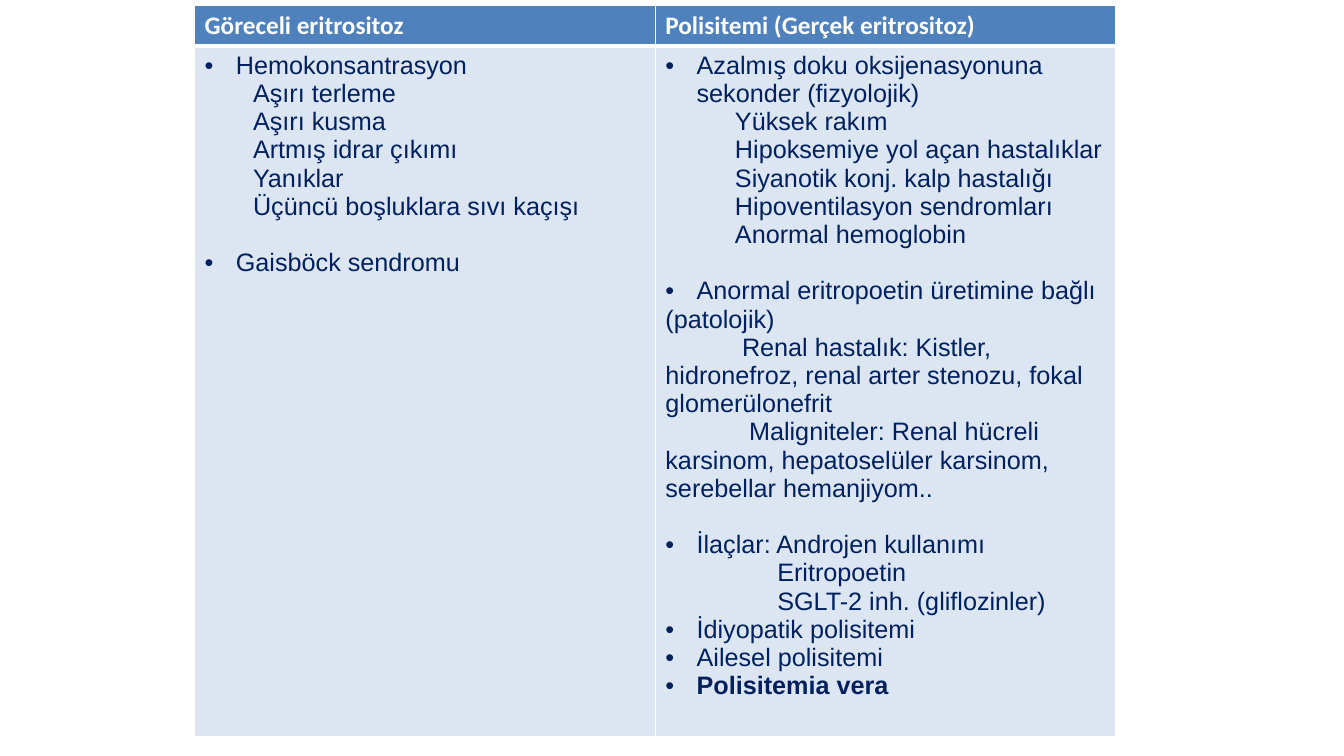
from dataclasses import dataclass

from lxml import etree
from pptx import Presentation
from pptx.dml.color import RGBColor
from pptx.oxml.ns import qn
from pptx.util import Inches, Pt

BLANK_LAYOUT = 6
SLIDE_WIDTH, SLIDE_HEIGHT = 13.33, 7.5
TABLE_LEFT, TABLE_TOP = 1.93, 0.05
COLUMN_WIDTH = 4.57
HEADER_HEIGHT, BODY_HEIGHT = 0.41, 6.85
BULLET_INDENT = 0.31
SECTION_GAP = 20.1


@dataclass(frozen=True)
class Theme:
    header_fill: str = "4F81BD"
    body_fill: str = "DCE6F2"
    header_text: str = "FFFFFF"
    body_text: str = "002060"
    border: str = "FFFFFF"
    header_font: str = "Calibri"
    body_font: str = "Arial"
    size: int = 18
    thin: int = 1
    thick: int = 3


THEME = Theme()


@dataclass(frozen=True)
class Line:
    text: str
    bullet: bool = False
    first_indent: float = 0
    gap: bool = False
    bold: bool = False


def bullet(text, gap=False, bold=False):
    return Line(text, bullet=True, gap=gap, bold=bold)


def indented(first_indent, *texts):
    return [Line(text, first_indent=first_indent) for text in texts]


HEADINGS = ["Göreceli eritrositoz", "Polisitemi (Gerçek eritrositoz)"]

RELATIVE_CAUSES = [
    bullet("Hemokonsantrasyon"),
    *indented(0.48, "Aşırı terleme", "Aşırı kusma", "Artmış idrar çıkımı",
              "Yanıklar", "Üçüncü boşluklara sıvı kaçışı"),
    bullet("Gaisböck sendromu", gap=True),
]

TRUE_CAUSES = [
    bullet("Azalmış doku oksijenasyonuna sekonder (fizyolojik)"),
    *indented(0.69, "Yüksek rakım", "Hipoksemiye yol açan hastalıklar",
              "Siyanotik konj. kalp hastalığı", "Hipoventilasyon sendromları",
              "Anormal hemoglobin"),
    bullet("Anormal eritropoetin üretimine bağlı", gap=True),
    Line("(patolojik)"),
    *indented(0.76, "Renal hastalık: Kistler, hidronefroz, renal arter "
                    "stenozu, fokal glomerülonefrit"),
    *indented(0.83, "Maligniteler: Renal hücreli karsinom, hepatoselüler "
                    "karsinom, serebellar hemanjiyom.."),
    bullet("İlaçlar: Androjen kullanımı", gap=True),
    *indented(1.11, "Eritropoetin", "SGLT-2 inh. (gliflozinler)"),
    bullet("İdiyopatik polisitemi"),
    bullet("Ailesel polisitemi"),
    bullet("Polisitemia vera", bold=True),
]


def style_font(paragraph, typeface, color, bold):
    font = paragraph.font
    font.name = typeface
    font.size = Pt(THEME.size)
    font.bold = bold
    font.color.rgb = RGBColor.from_string(color)


def style_cell(cell, fill, bottom_width):
    cell.fill.solid()
    cell.fill.fore_color.rgb = RGBColor.from_string(fill)
    properties = cell._tc.get_or_add_tcPr()
    widths = {"lnL": THEME.thin, "lnR": THEME.thin,
              "lnT": THEME.thin, "lnB": bottom_width}
    for position, (side, width) in enumerate(widths.items()):
        border = etree.Element(qn(f"a:{side}"), w=str(Pt(width)))
        solid = etree.SubElement(border, qn("a:solidFill"))
        etree.SubElement(solid, qn("a:srgbClr"), val=THEME.border)
        properties.insert(position, border)


def set_indent(paragraph, line):
    properties = paragraph._p.get_or_add_pPr()
    margin = BULLET_INDENT if line.bullet else 0
    first = -BULLET_INDENT if line.bullet else line.first_indent
    properties.set("marL", str(Inches(margin)))
    properties.set("indent", str(Inches(first)))
    if line.bullet:
        etree.SubElement(properties, qn("a:buFont"), typeface=THEME.body_font)
        etree.SubElement(properties, qn("a:buChar"), char="•")


def fill_heading(cell, heading):
    cell.text = heading
    style_font(cell.text_frame.paragraphs[0], THEME.header_font,
               THEME.header_text, True)
    style_cell(cell, THEME.header_fill, THEME.thick)


def fill_causes(cell, causes):
    frame = cell.text_frame
    for number, line in enumerate(causes):
        paragraph = frame.add_paragraph() if number else frame.paragraphs[0]
        paragraph.text = line.text
        if line.gap:
            paragraph.space_before = Pt(SECTION_GAP)
        set_indent(paragraph, line)
        style_font(paragraph, THEME.body_font, THEME.body_text, line.bold)
    style_cell(cell, THEME.body_fill, THEME.thin)


def add_comparison(slide):
    table = slide.shapes.add_table(
        2, len(HEADINGS), Inches(TABLE_LEFT), Inches(TABLE_TOP),
        Inches(COLUMN_WIDTH * len(HEADINGS)),
        Inches(HEADER_HEIGHT + BODY_HEIGHT)).table
    table.rows[0].height = Inches(HEADER_HEIGHT)
    table.rows[1].height = Inches(BODY_HEIGHT)
    for column, (heading, causes) in enumerate(
            zip(HEADINGS, [RELATIVE_CAUSES, TRUE_CAUSES])):
        table.columns[column].width = Inches(COLUMN_WIDTH)
        fill_heading(table.cell(0, column), heading)
        fill_causes(table.cell(1, column), causes)


def main():
    presentation = Presentation()
    presentation.slide_width = Inches(SLIDE_WIDTH)
    presentation.slide_height = Inches(SLIDE_HEIGHT)
    slide = presentation.slides.add_slide(
        presentation.slide_layouts[BLANK_LAYOUT])
    add_comparison(slide)
    presentation.save("out.pptx")


if __name__ == "__main__":
    main()
